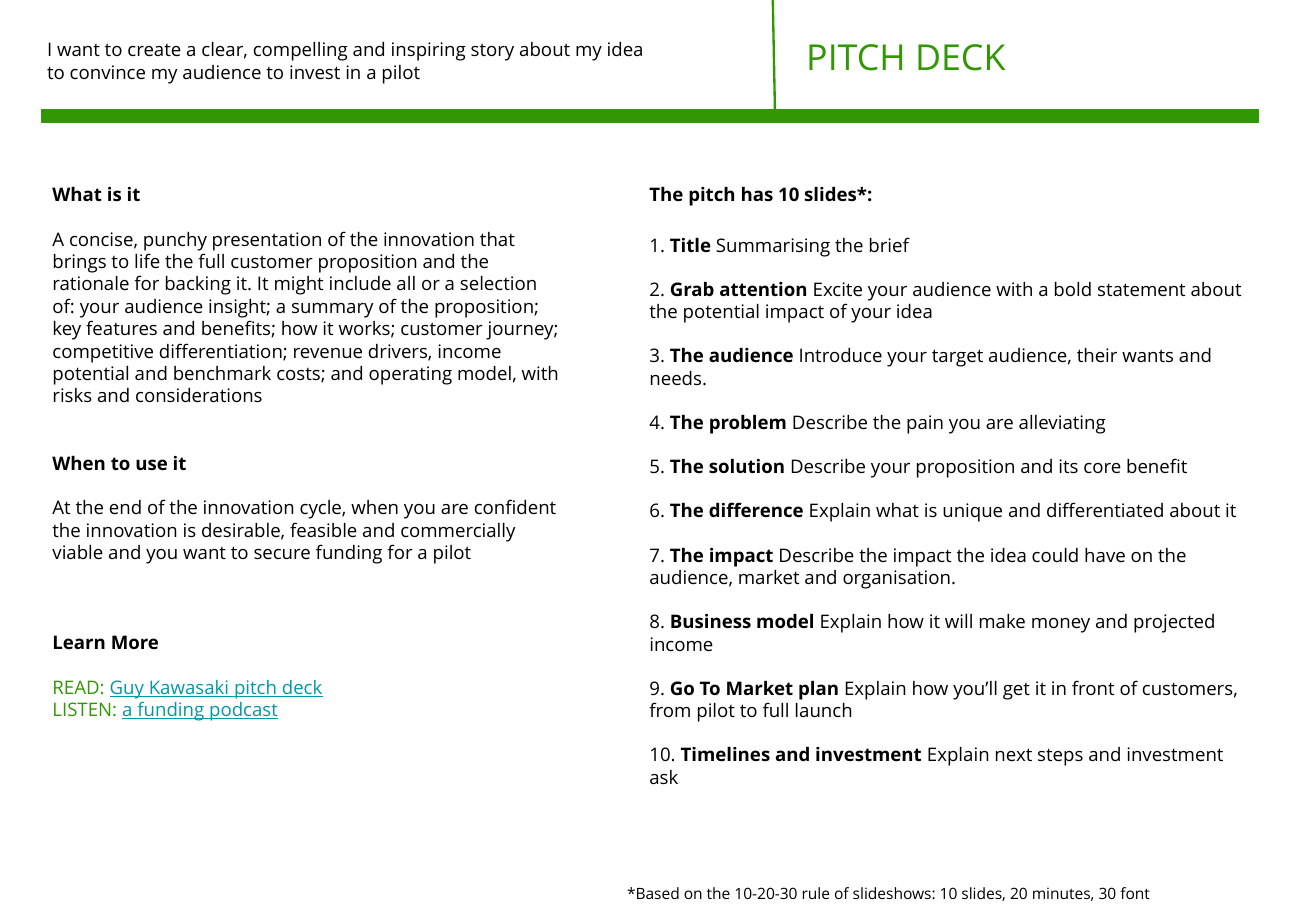
from pptx import Presentation
from pptx.dml.color import RGBColor
from pptx.enum.shapes import MSO_CONNECTOR, MSO_SHAPE
from pptx.oxml.ns import qn
from pptx.util import Inches, Pt
from lxml import etree

RECTANGLE = MSO_SHAPE.RECTANGLE
STRAIGHT = MSO_CONNECTOR.STRAIGHT
GREEN, BLACK, LINK = "319704", "000000", "0097A7"
FONT = "Open Sans"
LINE = 14.4  # height of one 12 pt line, in points


def rgb(value):
    return RGBColor.from_string(value)


def add_text(left, top, width, height, paragraphs, size=12, inset=0.1):
    """Each paragraph is (space before, [(text, colour, bold, underline), ...])."""
    tf = slide.shapes.add_textbox(
        Inches(left), Inches(top), Inches(width), Inches(height)).text_frame
    tf.word_wrap = True
    tf.margin_left = tf.margin_right = Inches(inset)
    tf.margin_top = tf.margin_bottom = Inches(inset)
    for i, (space, runs) in enumerate(paragraphs):
        p = tf.add_paragraph() if i else tf.paragraphs[0]
        p.space_before = Pt(space)
        p.font.size = Pt(size)
        p.font.name = FONT
        for text, color, bold, underline in runs:
            r = p.add_run()
            r.text = text
            r.font.color.rgb = rgb(color)
            r.font.bold = bold
            r.font.underline = underline


prs = Presentation()
prs.slide_width, prs.slide_height = Inches(11.75), Inches(8.25)
slide = prs.slides.add_slide(prs.slide_layouts[6])

# Header: purpose, green bar, title and divider
purpose = ["I want to create a clear, compelling and inspiring story about my idea",
           "to convince my audience to invest in a pilot"]
add_text(0.29, 0.21, 10.95, 0.92,
         [(0, [(text, BLACK, False, False)]) for text in purpose], inset=0.13)

bar = slide.shapes.add_shape(
    RECTANGLE, Inches(0.37), Inches(0.98), Inches(10.87), Inches(0.11))
bar.shadow.inherit = False
bar.fill.solid()
bar.fill.fore_color.rgb = rgb(GREEN)
bar.line.color.rgb = rgb(GREEN)
bar.line.width = Pt(0.75)

add_text(7.1, 0.21, 4.92, 0.59, [(0, [("PITCH DECK", GREEN, False, False)])], size=23)

divider = slide.shapes.add_connector(
    STRAIGHT, Inches(6.9), Inches(0), Inches(6.92), Inches(1.01))
divider.line.color.rgb = rgb(GREEN)
divider.line.width = Pt(1.5)
etree.SubElement(divider._element.spPr, qn("a:effectLst"))

# Left column: (space before in lines, text, bold)
about = [
    (0, "What is it", True),
    (1, "A concise, punchy presentation of the innovation that brings to life the full "
        "customer proposition and the rationale for backing it. It might include all or a "
        "selection of: your audience insight; a summary of the proposition; key features "
        "and benefits; how it works; customer journey; competitive differentiation; "
        "revenue drivers, income potential and benchmark costs; and operating model, with "
        "risks and considerations", False),
    (2, "When to use it", True),
    (1, "At the end of the innovation cycle, when you are confident the innovation is "
        "desirable, feasible and commercially viable and you want to secure funding for "
        "a pilot", False),
    (3, "Learn More", True),
]
resources = [(1, "READ: ", "Guy Kawasaki pitch deck"),
             (0, "LISTEN: ", "a funding podcast")]
left_column = [(lines * LINE, [(text, BLACK, bold, False)]) for lines, text, bold in about]
left_column += [(lines * LINE, [(label, GREEN, False, False), (name, LINK, False, True)])
                for lines, label, name in resources]
add_text(0.37, 1.53, 4.74, 5.25, left_column)

# Right column: numbered pitch slides
pitch_slides = [
    ("Title", "Summarising the brief"),
    ("Grab attention", "Excite your audience with a bold statement about the potential "
                       "impact of your idea"),
    ("The audience", "Introduce your target audience, their wants and needs."),
    ("The problem", "Describe the pain you are alleviating"),
    ("The solution", "Describe your proposition and its core benefit"),
    ("The difference", "Explain what is unique and differentiated about it"),
    ("The impact", "Describe the impact the idea could have on the audience, market and "
                   "organisation."),
    ("Business model", "Explain how it will make money and projected income"),
    ("Go To Market plan", "Explain how you’ll get it in front of customers, from pilot to "
                          "full launch"),
    ("Timelines and investment", "Explain next steps and investment ask"),
]
right_column = [(0, [("The pitch has 10 slides*:", BLACK, True, False)])]
for number, (name, detail) in enumerate(pitch_slides, 1):
    right_column.append((LINE + 4 if number == 1 else 14, [
        (f"{number}. ", BLACK, False, False),
        (name, BLACK, True, False),
        (f" {detail}", BLACK, False, False)]))
add_text(5.7, 1.53, 5.54, 5.46, right_column)

# Footnote
footnote = "*Based on the 10-20-30 rule of slideshows: 10 slides, 20 minutes, 30 font"
add_text(5.5, 7.81, 5.72, 0.37, [(0, [(footnote, BLACK, False, False)])], size=10)

prs.save("out.pptx")
